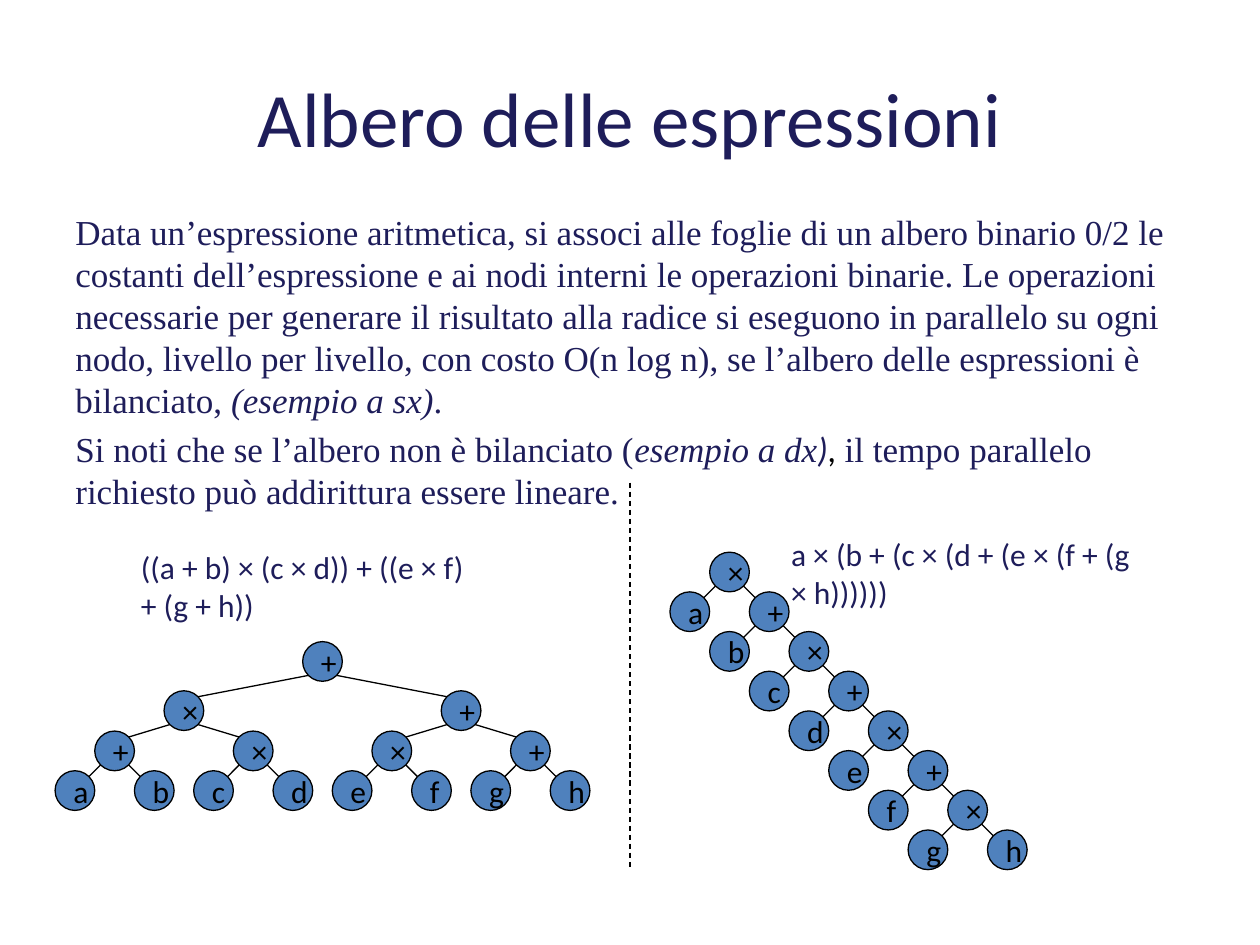
from lxml import etree
from pptx import Presentation
from pptx.dml.color import RGBColor
from pptx.enum import dml, shapes, text
from pptx.oxml import ns
from pptx.util import Inches, Pt

NAVY, BLACK, BLUE = "1E1D5A", "000000", "4F81BD"
SANS, SERIF = "Calibri", "Times New Roman"
SIZE = 0.315  # node diameter
EDGE = 0.11  # offset from a node's centre to its rim along a diagonal

BALANCED = (
    "+",
    ("×", ("+", "a", "b"), ("×", "c", "d")),
    ("+", ("×", "e", "f"), ("+", "g", "h")),
)
CHAIN = ("×", "a", ("+", "b", ("×", "c", ("+", "d", ("×", "e", ("+", "f", ("×", "g", "h")))))))

BODY = [
    [
        ("Data un’espressione aritmetica, si associ alle foglie di un albero binario 0/2 le "
         "costanti dell’espressione e ai nodi interni le operazioni binarie. Le operazioni "
         "necessarie per generare il risultato alla radice si eseguono in parallelo su ogni "
         "nodo, livello per livello, con costo O(n log n), se l’albero delle espressioni è "
         "bilanciato, ", {}),
        ("(esempio a sx)", {"italic": True}),
        (".", {}),
    ],
    [
        ("Si noti che se l’albero non è bilanciato (", {}),
        ("esempio a dx", {"italic": True}),
        (")", {"italic": True, "face": SANS}),
        (", ", {"italic": True, "face": SANS, "color": BLACK}),
        ("il tempo parallelo richiesto può addirittura essere lineare.", {}),
    ],
]


def rgb(code):
    return RGBColor.from_string(code)


def write(para, words, size=18, face=SANS, color=NAVY, italic=False):
    run = para.add_run()
    run.text = words
    font = run.font
    font.size, font.name, font.italic = Pt(size), face, italic
    font.color.rgb = rgb(color)


def add_box(slide, x, y, w, h, anchor=text.MSO_ANCHOR.TOP):
    frame = slide.shapes.add_textbox(Inches(x), Inches(y), Inches(w), Inches(h)).text_frame
    frame.word_wrap = True
    frame.vertical_anchor = anchor
    return frame


def add_title(slide, words):
    para = add_box(slide, 0.5, 0.3, 9, 1.25, text.MSO_ANCHOR.MIDDLE).paragraphs[0]
    para.alignment = text.PP_ALIGN.CENTER
    write(para, words, size=44)


def add_body(slide, paras):
    frame = add_box(slide, 0.5, 1.62, 9, 2.54)
    for i, runs in enumerate(paras):
        para = frame.add_paragraph() if i else frame.paragraphs[0]
        para.space_before, para.line_spacing = Pt(4), Pt(24)
        for words, style in runs:
            write(para, words, **{"size": 20, "face": SERIF, **style})


def add_label(slide, x, y, words):
    write(add_box(slide, x, y, 2.89, 0.3).paragraphs[0], words)


def add_line(parent, x1, y1, x2, y2):
    line = parent.add_connector(
        shapes.MSO_CONNECTOR.STRAIGHT, Inches(x1), Inches(y1), Inches(x2), Inches(y2))
    line.line.color.rgb = rgb(BLACK)
    line.line.width = Pt(0.75)
    etree.SubElement(line._element.spPr, ns.qn("a:effectLst"))
    return line


def add_node(parent, x, y, sign):
    node = parent.add_shape(
        shapes.MSO_SHAPE.OVAL, Inches(x - SIZE / 2), Inches(y - SIZE / 2),
        Inches(SIZE), Inches(SIZE))
    node.shadow.inherit = False
    node.fill.solid()
    node.fill.fore_color.rgb = rgb(BLUE)
    node.line.color.rgb = rgb(BLACK)
    node.line.width = Pt(0.75)
    frame = node.text_frame
    frame.word_wrap = True
    frame.vertical_anchor = text.MSO_ANCHOR.MIDDLE
    para = frame.paragraphs[0]
    para.alignment = text.PP_ALIGN.LEFT
    write(para, sign, color=BLACK)


def add_tree(parent, tree, x, y, gaps):
    """Draw a subtree centred on its root; gaps holds (dx, dy) for each level below."""
    sign, *kids = tree
    for side, kid in zip((-1, 1), kids):
        dx, dy = gaps[0]
        kx, ky = x + side * dx, y + dy
        add_line(parent, kx - side * EDGE, ky - EDGE, x + side * EDGE, y + EDGE)
        add_tree(parent, kid, kx, ky, gaps[1:])
    add_node(parent, x, y, sign)


def main():
    deck = Presentation()
    deck.slide_width, deck.slide_height = Inches(10), Inches(7.5)
    slide = deck.slides.add_slide(deck.slide_layouts[6])

    add_title(slide, "Albero delle espressioni")
    add_body(slide, BODY)
    rule = add_line(slide.shapes, 5, 3.83, 5, 6.9)
    rule.line.dash_style = dml.MSO_LINE.DASH

    left = slide.shapes.add_group_shape().shapes
    add_tree(left, BALANCED, 2.56, 5.25, [(1.1, 0.39), (0.55, 0.32), (SIZE, SIZE)])
    add_label(slide, 1.02, 4.3, "((a + b) × (c × d)) + ((e × f) + (g + h))")

    right = slide.shapes.add_group_shape().shapes
    add_tree(right, CHAIN, 5.79, 4.54, [(SIZE, SIZE)] * 7)
    add_label(slide, 6.18, 4.2, "a × (b + (c × (d + (e × (f + (g × h))))))")

    deck.save("out.pptx")


if __name__ == "__main__":
    main()
